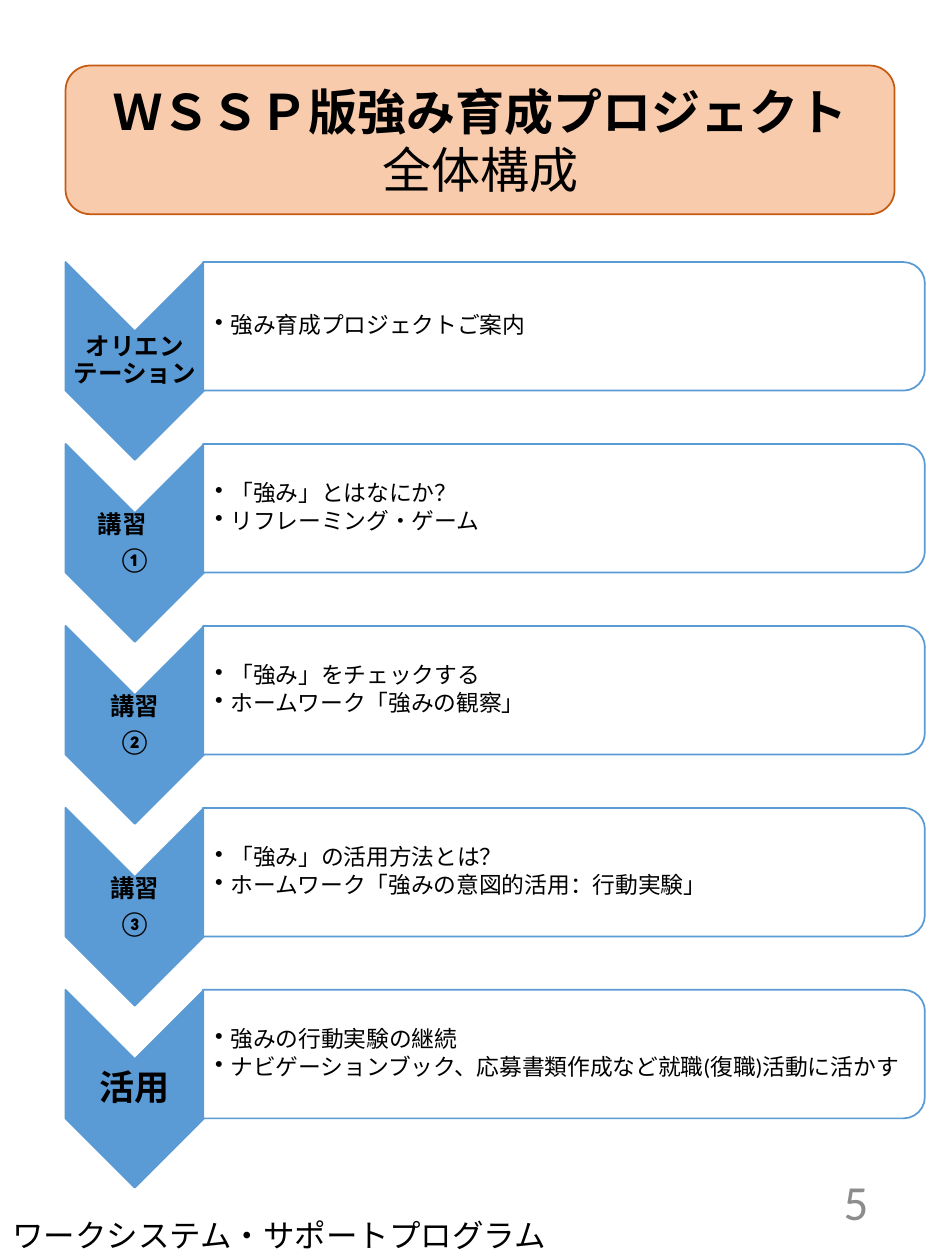
from pptx import Presentation
from pptx import util as u
from pptx.dml.color import RGBColor
from pptx.enum import shapes, text
from pptx.oxml.ns import qn
from lxml import etree

BLUE = RGBColor(0x5B, 0x9B, 0xD5)
PEACH = RGBColor(0xF8, 0xCB, 0xAD)
RUST = RGBColor(0xC5, 0x5A, 0x11)
WHITE = RGBColor(0xFF, 0xFF, 0xFF)
BLACK = RGBColor(0, 0, 0)
GRAY = RGBColor(0x8C, 0x8C, 0x8C)
FONT = "Calibri"

TITLE = ["ＷＳＳＰ版強み育成プロジェクト", "全体構成"]
STEPS = [
    (["オリエンテーション"], 14, ["強み育成プロジェクトご案内"]),
    (["講習　", "①"], 14, ["「強み」とはなにか？", "リフレーミング・ゲーム"]),
    (["講習", "②"], 14, ["「強み」をチェックする", "ホームワーク「強みの観察」"]),
    (["講習", "③"], 14, ["「強み」の活用方法とは？", "ホームワーク「強みの意図的活用：行動実験」"]),
    (["活用"], 20, ["強みの行動実験の継続",
                  "ナビゲーションブック、応募書類作成など就職(復職)活動に活かす"]),
]
PAGE_NUMBER = "5"
FOOTER = "ワークシステム・サポートプログラム"

WIDTH, HEIGHT = 7.5, 10
LEFT, TOP, PITCH = 0.52, 2.08, 1.444
ARROW_WIDTH, ARROW_HEIGHT = 1.1, 1.57
LABEL_HEIGHT = 0.47
PANEL_LEFT, PANEL_WIDTH, PANEL_HEIGHT = 1.61, 5.73, 1.02
DETAIL_WIDTH, DETAIL_HEIGHT = 5.68, 0.92
INDENT = 0.12
THIN = 0.01


def add_shape(page, kind, left, top, width, height, fill, line):
    shape = page.shapes.add_shape(kind, *map(u.Inches, (left, top, width, height)))
    shape.shadow.inherit = False
    shape.fill.solid()
    shape.fill.fore_color.rgb = fill
    shape.line.color.rgb = line
    shape.line.width = u.Pt(1)
    return shape


def add_turned(page, kind, left, top, width, height, fill):
    shape = add_shape(page, kind, left + (width - height) / 2,
                      top + (height - width) / 2, height, width, fill, BLUE)
    shape.rotation = 90
    return shape


def write(box, lines, size, color=BLACK, bold=False, align=text.PP_ALIGN.LEFT,
          anchor=text.MSO_ANCHOR.MIDDLE, insets=None):
    frame = box.text_frame
    frame.word_wrap = True
    frame.vertical_anchor = anchor
    if insets:
        (frame.margin_left, frame.margin_top,
         frame.margin_right, frame.margin_bottom) = map(u.Inches, insets)
    frame.text = "\n".join(lines)
    for para in frame.paragraphs:
        para.alignment = align
        for span in para.runs:
            span.font.name = FONT
            span.font.size = u.Pt(size)
            span.font.bold = bold
            span.font.color.rgb = color
    return frame.paragraphs


def add_text(page, left, top, width, height, *args, **style):
    box = page.shapes.add_textbox(*map(u.Inches, (left, top, width, height)))
    return write(box, *args, **style)


def space(paras, size, share):
    for para in paras:
        para.line_spacing = 0.9
        para.space_after = u.Pt(size * share)


def add_bullets(paras):
    for para in paras:
        props = para._p.get_or_add_pPr()
        props.set("marL", str(u.Inches(INDENT)))
        props.set("indent", str(-u.Inches(INDENT)))
        etree.SubElement(props, qn("a:buChar"), char="•")


def add_step(page, top, labels, size, details):
    add_turned(page, shapes.MSO_SHAPE.CHEVRON, LEFT, top,
               ARROW_WIDTH, ARROW_HEIGHT, BLUE)
    paras = add_text(page, LEFT, top + (ARROW_HEIGHT - LABEL_HEIGHT) / 2,
                     ARROW_WIDTH, LABEL_HEIGHT, labels, size, bold=True,
                     align=text.PP_ALIGN.CENTER, insets=[THIN] * 4)
    space(paras, size, 0.35)

    panel = add_turned(page, shapes.MSO_SHAPE.ROUND_2_SAME_RECTANGLE, PANEL_LEFT,
                       top, PANEL_WIDTH, PANEL_HEIGHT, WHITE)
    tint = panel._element.spPr.find(qn("a:solidFill"))[0]
    etree.SubElement(tint, qn("a:alpha"), val="90000")
    paras = add_text(page, PANEL_LEFT, top + (PANEL_HEIGHT - DETAIL_HEIGHT) / 2,
                     DETAIL_WIDTH, DETAIL_HEIGHT, details, 13,
                     insets=[0.1, THIN, THIN, THIN])
    space(paras, 13, 0.15)
    add_bullets(paras)


def main():
    deck = Presentation()
    deck.slide_width, deck.slide_height = u.Inches(WIDTH), u.Inches(HEIGHT)
    page = deck.slides.add_slide(deck.slide_layouts[6])

    for row, step in enumerate(STEPS):
        add_step(page, TOP + row * PITCH, *step)

    banner = add_shape(page, shapes.MSO_SHAPE.ROUNDED_RECTANGLE,
                       LEFT, 0.52, 6.58, 1.18, PEACH, RUST)
    heading = write(banner, TITLE, 28, bold=True, align=text.PP_ALIGN.CENTER)
    heading[1].runs[0].font.bold = False

    add_text(page, 5.3, 9.27, 1.69, 0.53, [PAGE_NUMBER], 28, GRAY,
             align=text.PP_ALIGN.RIGHT)
    add_text(page, 0, 9.6, 5.13, 0.4, [FOOTER], 18, anchor=text.MSO_ANCHOR.TOP)
    deck.save("out.pptx")


if __name__ == "__main__":
    main()
